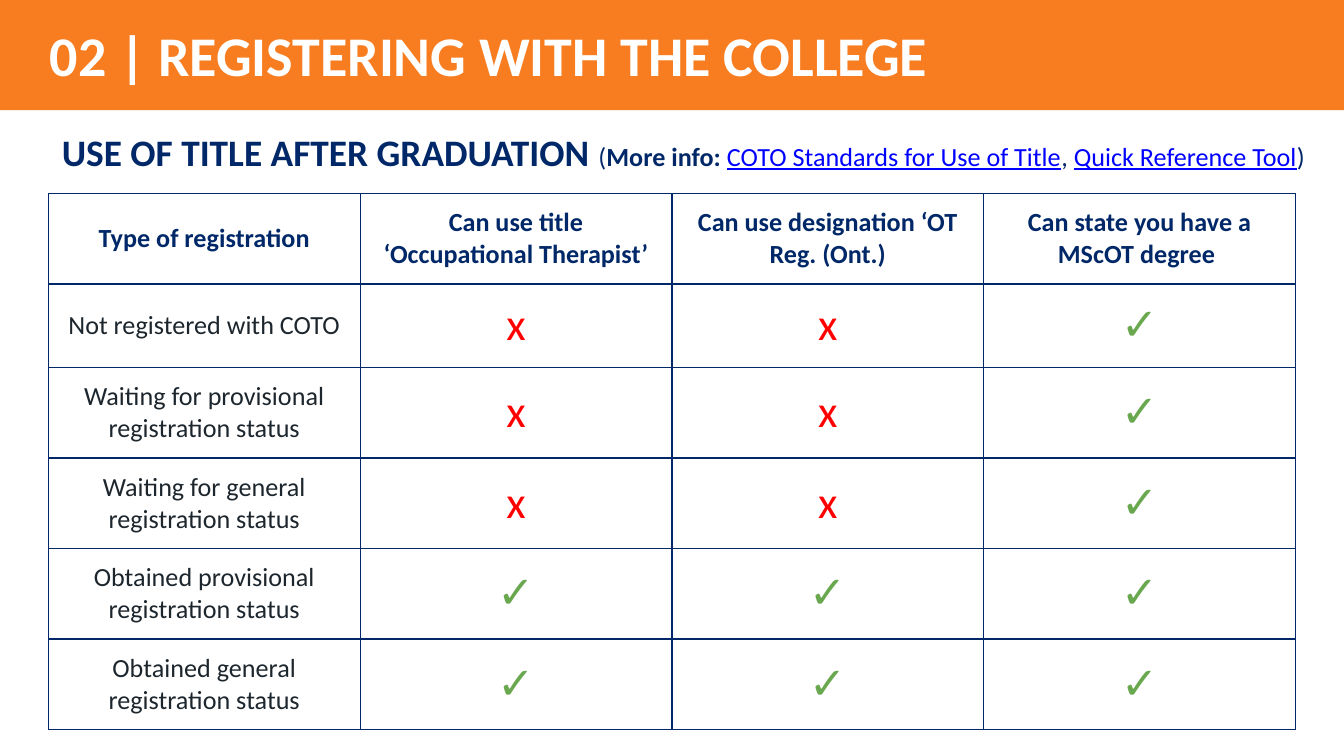
from dataclasses import dataclass
from typing import NamedTuple

from lxml import etree
from pptx import Presentation
from pptx.dml.color import RGBColor
from pptx.enum.shapes import MSO_SHAPE
from pptx.enum.text import MSO_ANCHOR, MSO_AUTO_SIZE, PP_ALIGN
from pptx.oxml.ns import qn
from pptx.util import Inches, Pt

RECT = MSO_SHAPE.RECTANGLE
MIDDLE = MSO_ANCHOR.MIDDLE
LEFT, CENTER = PP_ALIGN.LEFT, PP_ALIGN.CENTER
NO_FIT = MSO_AUTO_SIZE.NONE
SIDES = ("lnL", "lnR", "lnT", "lnB")


@dataclass(frozen=True)
class Theme:
    font: str = "Calibri"
    orange: str = "F77D20"
    white: str = "FFFFFF"
    navy: str = "002868"
    link: str = "0000FF"
    ink: str = "1D262D"
    red: str = "FF0000"
    green: str = "6AA84F"
    title: int = 30
    heading: int = 20
    text: int = 14
    mark: int = 24
    border: float = 0.75
    inset: float = 0.1


class Box(NamedTuple):
    left: float
    top: float
    width: float
    height: float


class Run(NamedTuple):
    text: str
    size: int
    color: str
    bold: bool = False
    underline: bool = False


class Registration(NamedTuple):
    kind: str
    marks: str


T = Theme()
WIDTH = 10
HEIGHT = WIDTH * 9 / 16
ROW = 0.62  # least height; rows with two lines of text grow
BAND = Box(-0.01, -0.02, 10.24, 0.84)
TITLE = Box(0.27, 0.14, 7.71, 0.53)
HEADING = Box(0.36, 0.86, 9.48, 0.53)

HEADING_RUNS = [
    Run("USE OF TITLE AFTER GRADUATION ", T.heading, T.navy, True),
    Run("(", T.text, T.navy),
    Run("More info: ", T.text, T.navy, True),
    Run("COTO Standards for Use of Title", T.text, T.link, underline=True),
    Run(", ", T.text, T.navy),
    Run("Quick Reference Tool", T.text, T.link, underline=True),
    Run(")", T.text, T.navy),
]
COLUMNS = [
    "Type of registration",
    "Can use title ‘Occupational Therapist’",
    "Can use designation ‘OT Reg. (Ont.)",
    "Can state you have a MScOT degree ",
]
REGISTRATIONS = [
    Registration("Not registered with COTO", "xx✓"),
    Registration("Waiting for provisional registration status", "xx✓"),
    Registration("Waiting for general registration status", "xx✓"),
    Registration("Obtained provisional registration status", "✓✓✓"),
    Registration("Obtained general registration status", "✓✓✓"),
]
MARK_COLORS = {"x": T.red, "✓": T.green}
TABLE = Box(0.36, 1.44, 9.28, ROW * (1 + len(REGISTRATIONS)))


def set_all(obj, values: dict) -> None:
    for name, value in values.items():
        setattr(obj, name, value)


def margins() -> dict:
    return {f"margin_{side}": Inches(T.inset)
            for side in ("left", "right", "top", "bottom")}


def write(tf, runs: list[Run], align) -> None:
    p = tf.paragraphs[0]
    set_all(p, {"alignment": align, "space_before": Pt(0), "line_spacing": 1.0})
    for run in runs:
        r = p.add_run()
        r.text = run.text
        set_all(r.font, {"name": T.font, "size": Pt(run.size),
                         "bold": run.bold, "underline": run.underline})
        r.font.color.rgb = RGBColor.from_string(run.color)


def fill_placeholder(sp, box: Box, runs: list[Run]) -> None:
    set_all(sp, {name: Inches(v) for name, v in box._asdict().items()})
    set_all(sp.text_frame, {"word_wrap": True, "auto_size": NO_FIT,
                            "vertical_anchor": MIDDLE, **margins()})
    write(sp.text_frame, runs, LEFT)


def add_band(s, box: Box):
    sp = s.shapes.add_shape(RECT, *map(Inches, box))
    sp.shadow.inherit = False
    sp.fill.solid()
    sp.fill.fore_color.rgb = RGBColor.from_string(T.orange)
    sp.line.fill.background()
    return sp


def add_borders(cell) -> None:
    tc_pr = cell._tc.get_or_add_tcPr()
    for i, side in enumerate(SIDES):
        ln = etree.Element(qn(f"a:{side}"), w=str(Pt(T.border)))
        fill = etree.SubElement(ln, qn("a:solidFill"))
        etree.SubElement(fill, qn("a:srgbClr"), val=T.navy)
        tc_pr.insert(i, ln)


def fill_cell(cell, run: Run) -> None:
    set_all(cell, {"vertical_anchor": MIDDLE, **margins()})
    cell.fill.background()
    add_borders(cell)
    write(cell.text_frame, [run], CENTER)


def add_registration_table(s) -> None:
    rows = [[Run(c, T.text, T.navy, True) for c in COLUMNS]]
    for reg in REGISTRATIONS:
        marks = [Run(m, T.mark, MARK_COLORS[m]) for m in reg.marks]
        rows.append([Run(reg.kind, T.text, T.ink), *marks])

    table = s.shapes.add_table(len(rows), len(COLUMNS),
                               *map(Inches, TABLE)).table
    set_all(table, {"first_row": False, "horz_banding": False})
    for col in table.columns:
        col.width = Inches(TABLE.width / len(COLUMNS))
    for i, runs in enumerate(rows):
        table.rows[i].height = Inches(ROW)
        for j, run in enumerate(runs):
            fill_cell(table.cell(i, j), run)


def main() -> None:
    prs = Presentation()
    prs.slide_width, prs.slide_height = Inches(WIDTH), Inches(HEIGHT)
    s = prs.slides.add_slide(prs.slide_layouts[0])
    title, heading = s.placeholders
    fill_placeholder(title, TITLE, [
        Run("02 | REGISTERING WITH THE COLLEGE", T.title, T.white, True)])
    fill_placeholder(heading, HEADING, HEADING_RUNS)
    band = add_band(s, BAND)
    title.element.addprevious(band.element)  # keeps the band behind the title
    add_registration_table(s)
    prs.save("out.pptx")


if __name__ == "__main__":
    main()
